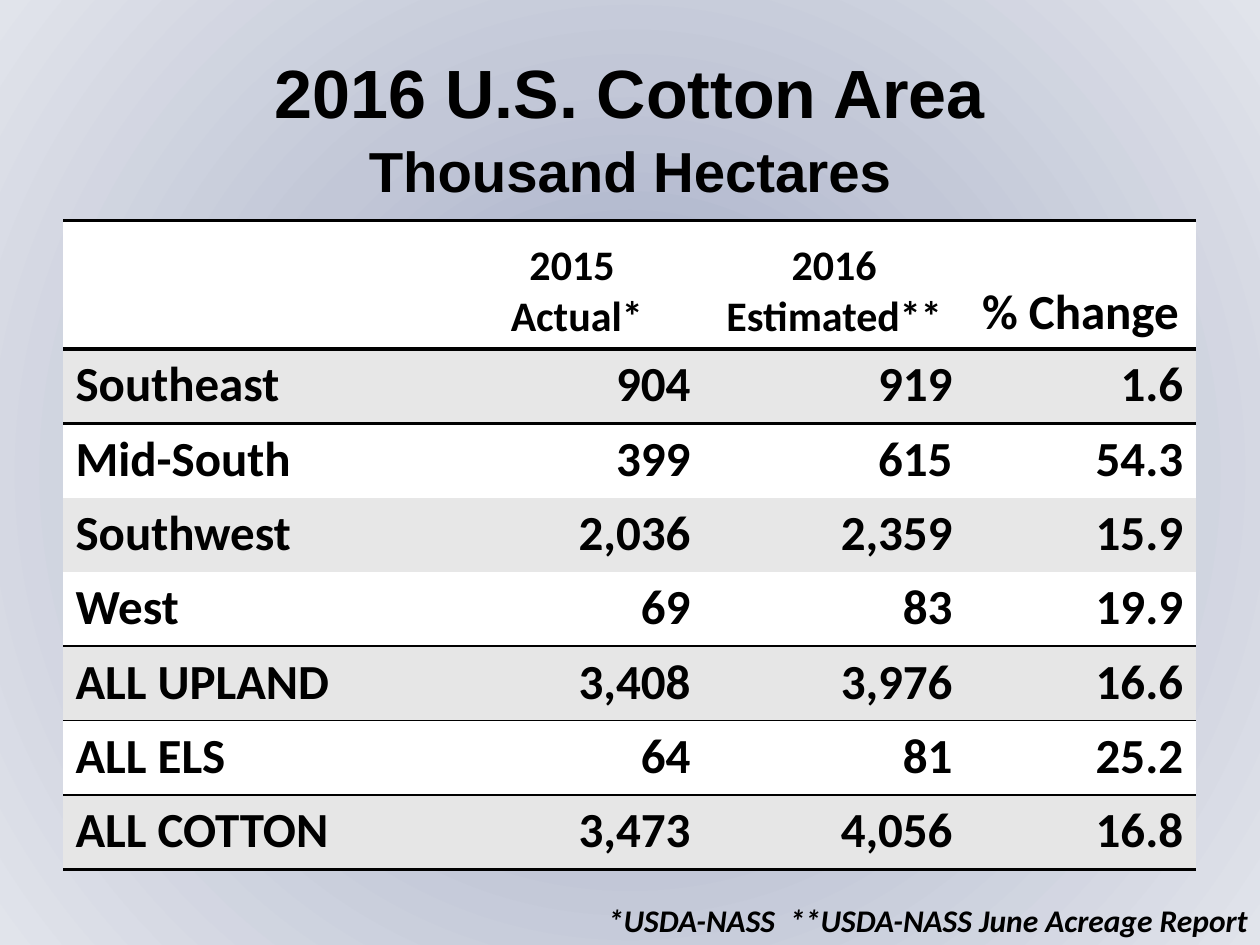
from lxml.etree import SubElement
from pptx import Presentation
from pptx.dml.color import RGBColor
from pptx.enum.text import MSO_ANCHOR, PP_ALIGN
from pptx.oxml import parse_xml
from pptx.oxml.ns import nsdecls, qn
from pptx.util import Inches, Pt

BLACK = RGBColor(0x00, 0x00, 0x00)
WHITE = RGBColor(0xFF, 0xFF, 0xFF)
GREY = RGBColor(0xE7, 0xE7, 0xE7)
TOTAL_GREY = RGBColor(0xE6, 0xE6, 0xE6)
GRADIENT = [
    (0, RGBColor(0x98, 0xA3, 0xC1)),
    (50, RGBColor(0xC2, 0xC7, 0xD7)),
    (100, RGBColor(0xE1, 0xE4, 0xEB)),
]
PLAIN_TABLE_STYLE = "{2D5ABB26-0587-4C30-8999-92F81FD0307C}"

TITLE = {"name": "Arial", "size": Pt(39), "bold": True}
SUBTITLE = TITLE | {"size": Pt(32.2)}
BODY = {"name": "Calibri", "size": Pt(28), "bold": True}
YEAR_HEADING = BODY | {"size": Pt(24)}
FOOTNOTE = BODY | {"size": Pt(18), "italic": True}

COLUMN_WIDTHS = [3, 2.08, 2.08, 1.83]
HEADER_HEIGHT, ROW_HEIGHT = 1.02, 0.59
HEADINGS = [
    [],
    [("2015", YEAR_HEADING), (" Actual*", YEAR_HEADING)],
    [("2016 Estimated**", YEAR_HEADING)],
    [("% Change", BODY)],
]
AREAS = [
    ("Southeast", "904", "919", "1.6"),
    ("Mid-South", "399", "615", "54.3"),
    ("Southwest", "2,036", "2,359", "15.9"),
    ("West", "69", "83", "19.9"),
    ("ALL UPLAND", "3,408", "3,976", "16.6"),
    ("ALL ELS", "64", "81", "25.2"),
    ("ALL COTTON", "3,473", "4,056", "16.8"),
]
# Rule width in points above each table row, and below the last one
RULES = [2, 2, 0, 0, 0, 1, 0, 1, 2]


def set_background(slide):
    """Fill the slide with a gradient that spreads from its centre."""
    stops = "".join(
        f'<a:gs pos="{percent * 1000}"><a:srgbClr val="{color}"/></a:gs>'
        for percent, color in GRADIENT
    )
    background = parse_xml(
        f'<p:bg {nsdecls("p", "a")}><p:bgPr><a:gradFill rotWithShape="1">'
        f'<a:gsLst>{stops}</a:gsLst><a:path path="circle">'
        '<a:fillToRect l="50000" t="50000" r="50000" b="50000"/></a:path>'
        "</a:gradFill><a:effectLst/></p:bgPr></p:bg>"
    )
    slide.element.cSld.insert(0, background)


def write_lines(text_frame, lines, alignment):
    """Write (text, format) pairs, one paragraph each."""
    for index, (text, font_format) in enumerate(lines):
        paragraph = text_frame.add_paragraph() if index else text_frame.paragraphs[0]
        paragraph.alignment = alignment
        run = paragraph.add_run()
        run.text = text
        run.font.color.rgb = BLACK
        for name, value in font_format.items():
            setattr(run.font, name, value)


def add_text(slide, left, top, width, height, lines, alignment):
    shape = slide.shapes.add_textbox(
        Inches(left), Inches(top), Inches(width), Inches(height)
    )
    shape.text_frame.word_wrap = True
    write_lines(shape.text_frame, lines, alignment)
    return shape


def add_rule(cell, side, width):
    """Draw one cell border; the lines must come before the fill."""
    properties = cell._tc.get_or_add_tcPr()
    line = SubElement(properties, qn(f"a:{side}"), w=str(Pt(width)))
    fill = SubElement(line, qn("a:solidFill"))
    SubElement(fill, qn("a:srgbClr"), val=str(BLACK))


def format_cell(cell, row_index, color):
    for side, width in zip(("lnT", "lnB"), RULES[row_index:row_index + 2]):
        if width:
            add_rule(cell, side, width)
    cell.fill.solid()
    cell.fill.fore_color.rgb = color


def add_area_table(slide):
    height = HEADER_HEIGHT + ROW_HEIGHT * len(AREAS)
    table = slide.shapes.add_table(
        len(AREAS) + 1, len(COLUMN_WIDTHS),
        Inches(0.5), Inches(1.75), Inches(sum(COLUMN_WIDTHS)), Inches(height),
    ).table
    table.first_row = table.horz_banding = False
    table._tbl.tblPr.find(qn("a:tableStyleId")).text = PLAIN_TABLE_STYLE
    for column, width in zip(table.columns, COLUMN_WIDTHS):
        column.width = Inches(width)
    for index, row in enumerate(table.rows):
        row.height = Inches(ROW_HEIGHT if index else HEADER_HEIGHT)

    for column_index, lines in enumerate(HEADINGS):
        cell = table.cell(0, column_index)
        cell.vertical_anchor = MSO_ANCHOR.BOTTOM
        write_lines(cell.text_frame, lines, PP_ALIGN.CENTER)
        format_cell(cell, 0, WHITE)

    for row_index, values in enumerate(AREAS, start=1):
        band = TOTAL_GREY if values[0].startswith("ALL") else GREY
        for column_index, value in enumerate(values):
            cell = table.cell(row_index, column_index)
            alignment = PP_ALIGN.RIGHT if column_index else PP_ALIGN.LEFT
            write_lines(cell.text_frame, [(value, BODY)], alignment)
            format_cell(cell, row_index, band if row_index % 2 else WHITE)


def main():
    presentation = Presentation()
    presentation.slide_width = Inches(10)
    presentation.slide_height = Inches(7.5)
    slide = presentation.slides.add_slide(presentation.slide_layouts[6])
    set_background(slide)

    title = add_text(
        slide, 0.5, 0.3, 9, 1.25,
        [("2016 U.S. Cotton Area", TITLE), ("Thousand Hectares", SUBTITLE)],
        PP_ALIGN.CENTER,
    )
    title.text_frame.margin_top = Inches(0.1)
    title.text_frame.paragraphs[1].space_before = Pt(2)

    add_area_table(slide)
    add_text(
        slide, 4.67, 7.1, 6.25, 0.4,
        [(" *USDA-NASS  **USDA-NASS June Acreage Report", FOOTNOTE)],
        PP_ALIGN.LEFT,
    )
    presentation.save("out.pptx")


if __name__ == "__main__":
    main()
